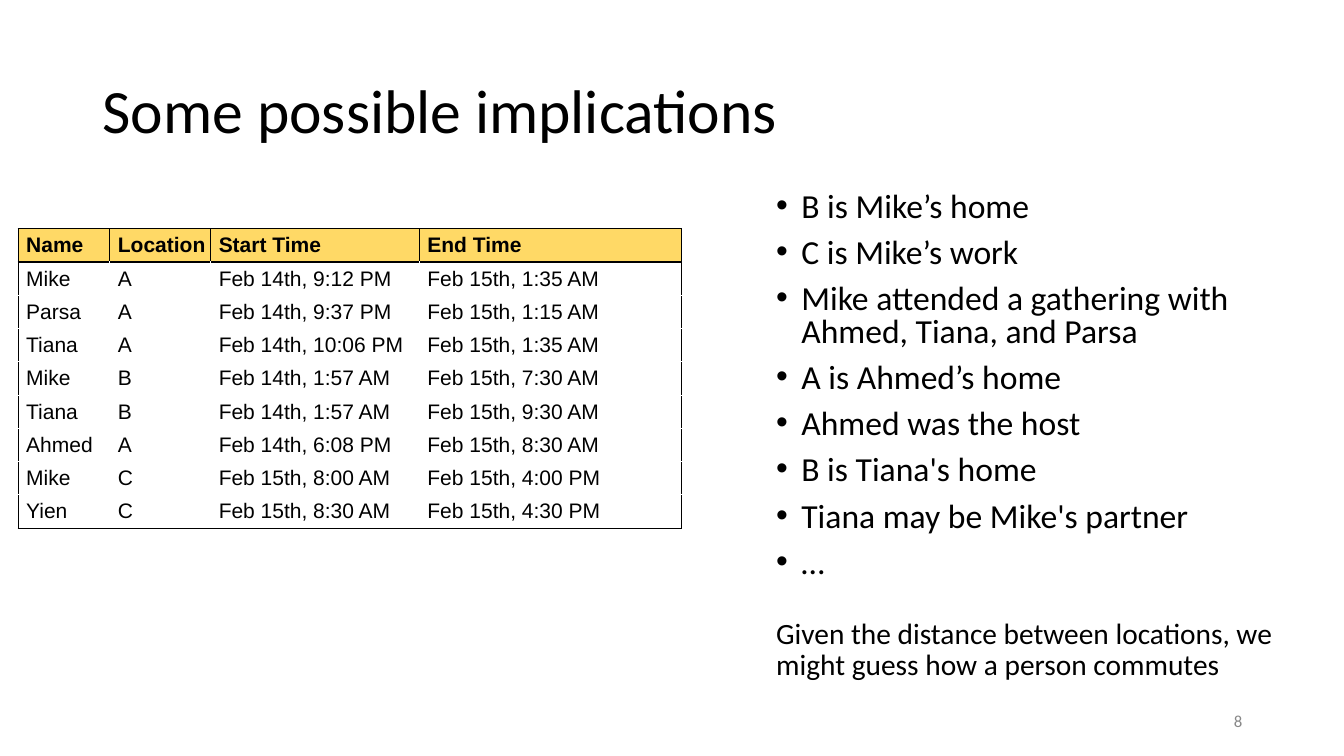
from lxml.etree import SubElement
from pptx import Presentation
from pptx.dml.color import RGBColor
from pptx.enum.text import MSO_ANCHOR as Anchor, PP_ALIGN as Align
from pptx.oxml import parse_xml
from pptx.oxml.ns import nsdecls, qn
from pptx.util import Inches, Pt

COLORS = {"text": "000000", "number": "888888", "header": "FFD966",
          "outer": "000000", "inner": "FFFFFF"}

COLUMN_WIDTHS = [0.91, 1, 2.07, 2.6]
ROW_HEIGHT = 0.25
VISITS = [
    ("Name", "Location", "Start Time", "End Time"),
    ("Mike", "A", "Feb 14th, 9:12 PM", "Feb 15th, 1:35 AM"),
    ("Parsa", "A", "Feb 14th, 9:37 PM", "Feb 15th, 1:15 AM"),
    ("Tiana", "A", "Feb 14th, 10:06 PM", "Feb 15th, 1:35 AM"),
    ("Mike", "B", "Feb 14th, 1:57 AM", "Feb 15th, 7:30 AM"),
    ("Tiana", "B", "Feb 14th, 1:57 AM", "Feb 15th, 9:30 AM"),
    ("Ahmed", "A", "Feb 14th, 6:08 PM", "Feb 15th, 8:30 AM"),
    ("Mike", "C", "Feb 15th, 8:00 AM", "Feb 15th, 4:00 PM"),
    ("Yien", "C", "Feb 15th, 8:30 AM", "Feb 15th, 4:30 PM"),
]
IMPLICATIONS = [
    "B is Mike’s home",
    "C is Mike’s work",
    "Mike attended a gathering with \vAhmed, Tiana, and Parsa",
    "A is Ahmed’s home",
    "Ahmed was the host",
    "B is Tiana's home",
    "Tiana may be Mike's partner",
    "…",
]


def write_text(paragraph, text, size, font="Calibri", color="text", bold=False,
               align=Align.LEFT, line_spacing=1.0, space_before=0):
    paragraph.text = text
    paragraph.alignment = align
    paragraph.line_spacing = line_spacing
    paragraph.space_before = Pt(space_before)
    for run in paragraph.runs:
        run.font.name = font
        run.font.size = Pt(size)
        run.font.bold = bold
        run.font.color.rgb = RGBColor.from_string(COLORS[color])


def add_bullet(paragraph):
    properties = paragraph._p.get_or_add_pPr()
    properties.set("marL", str(Inches(0.25)))
    properties.set("indent", str(-Inches(0.25)))
    SubElement(properties, qn("a:buFont")).set("typeface", "Arial")
    SubElement(properties, qn("a:buChar")).set("char", "•")


def add_text_frame(slide, box, anchor=Anchor.TOP):
    frame = slide.shapes.add_textbox(*map(Inches, box)).text_frame
    frame.word_wrap = True
    frame.vertical_anchor = anchor
    return frame


def add_text(slide, box, text, anchor=Anchor.TOP, **text_format):
    frame = add_text_frame(slide, box, anchor)
    write_text(frame.paragraphs[0], text, **text_format)


def add_implications(slide, box):
    frame = add_text_frame(slide, box)
    for index, implication in enumerate(IMPLICATIONS):
        paragraph = frame.add_paragraph() if index else frame.paragraphs[0]
        write_text(paragraph, implication, size=24, line_spacing=0.8,
                   space_before=10 if index else 0)
        add_bullet(paragraph)


def set_borders(cell, outer_sides):
    properties = cell._tc.get_or_add_tcPr()
    for index, side in enumerate("LRTB"):
        color = COLORS["outer" if side in outer_sides else "inner"]
        properties.insert(index, parse_xml(
            f'<a:ln{side} {nsdecls("a")} w="{Pt(1)}"><a:solidFill>'
            f'<a:srgbClr val="{color}"/></a:solidFill></a:ln{side}>'))


def find_outer_sides(row, column):
    if row == 0:
        return "LRTB"
    at_edge = {"L": column == 0, "R": column == len(COLUMN_WIDTHS) - 1,
               "T": row == 1, "B": row == len(VISITS) - 1}
    return [side for side, outer in at_edge.items() if outer]


def add_visits_table(slide, left, top):
    box = (left, top, sum(COLUMN_WIDTHS), ROW_HEIGHT * len(VISITS))
    table = slide.shapes.add_table(len(VISITS), len(COLUMN_WIDTHS),
                                   *map(Inches, box)).table
    table.horz_banding = False
    for column, width in zip(table.columns, COLUMN_WIDTHS):
        column.width = Inches(width)
    for row, visit in enumerate(VISITS):
        for column, text in enumerate(visit):
            cell = table.cell(row, column)
            cell.vertical_anchor = Anchor.MIDDLE
            cell.margin_left = Inches(0.08)
            cell.margin_right = cell.margin_top = cell.margin_bottom = Inches(0.04)
            write_text(cell.text_frame.paragraphs[0], text, size=15,
                       font="Arial", bold=row == 0)
            if row == 0:
                cell.fill.solid()
                cell.fill.fore_color.rgb = RGBColor.from_string(COLORS["header"])
            else:
                cell.fill.background()
            set_borders(cell, find_outer_sides(row, column))


def main():
    presentation = Presentation()
    presentation.slide_width = Inches(13.33)
    presentation.slide_height = Inches(7.5)
    slide = presentation.slides.add_slide(presentation.slide_layouts[6])
    add_text(slide, (0.92, 0.4, 11.5, 1.45), "Some possible implications",
             anchor=Anchor.MIDDLE, size=44, line_spacing=0.9)
    add_visits_table(slide, 0.18, 2.27)
    add_implications(slide, (7.6, 1.86, 5.47, 4.28))
    add_text(slide, (7.6, 6.09, 5.33, 0.86),
             "Given the distance between locations, we might guess how a person commutes",
             size=21, line_spacing=0.9)
    add_text(slide, (9.42, 6.95, 3, 0.4), "8", anchor=Anchor.MIDDLE,
             size=12, color="number", align=Align.RIGHT)
    presentation.save("out.pptx")


if __name__ == "__main__":
    main()
